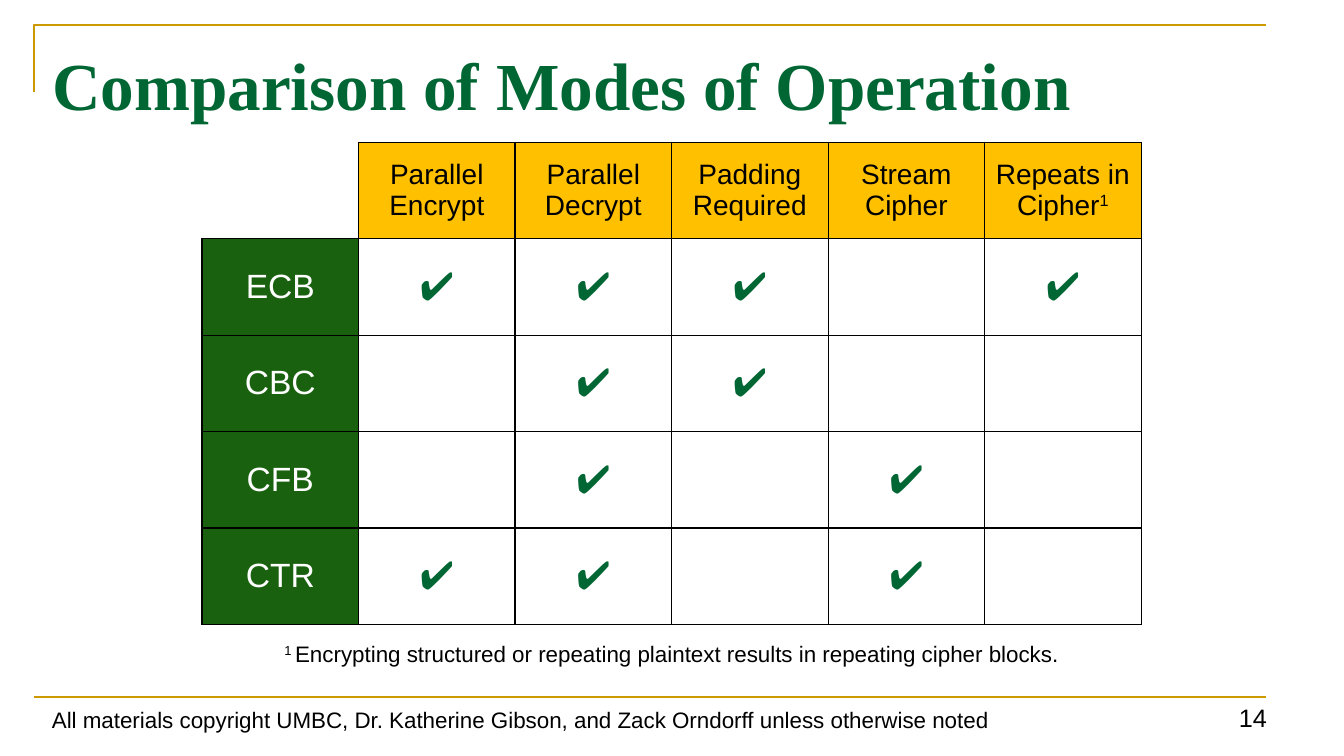
from lxml.etree import SubElement
from pptx import Presentation
from pptx.dml.color import RGBColor
from pptx.enum.shapes import MSO_CONNECTOR
from pptx.enum.text import MSO_ANCHOR, MSO_AUTO_SIZE, PP_ALIGN
from pptx.oxml.ns import qn
from pptx.util import Pt

COLORS = {
    "gold": "CC9900",
    "green": "006633",
    "header": "FFC000",
    "label": "1A610F",
    "black": "000000",
    "white": "FFFFFF",
}

FORMATS = {
    "title": {"name": "Times New Roman", "size": Pt(48), "bold": True, "color": "green"},
    "header": {"name": "Arial", "size": Pt(20), "color": "black"},
    "label": {"name": "Arial", "size": Pt(24), "color": "white"},
    "check": {"name": "Arial", "size": Pt(28), "color": "green"},
    "note": {"name": "Arial", "size": Pt(16), "color": "black"},
    "number": {"name": "Arial", "size": Pt(18), "color": "black"},
}

PROPERTIES = ["Parallel Encrypt", "Parallel Decrypt", "Padding Required",
              "Stream Cipher", "Repeats in Cipher"]
MODES = {
    "ECB": (1, 1, 1, 0, 1),
    "CBC": (0, 1, 1, 0, 0),
    "CFB": (0, 1, 0, 1, 0),
    "CTR": (1, 1, 0, 1, 0),
}
COLUMN_WIDTH, ROW_HEIGHT = 111.8, 68.9


def rgb(color):
    return RGBColor.from_string(COLORS[color])


def add_span(para, text, style, superscript=False):
    span = para.add_run()
    span.text = text
    for key, value in FORMATS[style].items():
        if key == "color":
            span.font.color.rgb = rgb(value)
        else:
            setattr(span.font, key, value)
    if superscript:
        span._r.get_or_add_rPr().set("baseline", "32000")


def set_margins(target, margin):
    for side in ("left", "top", "right", "bottom"):
        setattr(target, f"margin_{side}", Pt(margin))


def add_title(slide, text):
    title = slide.shapes.title
    place = {"left": 30, "top": 21.6, "width": 881, "height": 80}
    for key, value in place.items():
        setattr(title, key, Pt(value))
    frame = title.text_frame
    layout = {"vertical_anchor": MSO_ANCHOR.TOP, "auto_size": MSO_AUTO_SIZE.NONE,
              "margin_top": Pt(9)}
    for key, value in layout.items():
        setattr(frame, key, value)
    frame.paragraphs[0].alignment = PP_ALIGN.LEFT
    add_span(frame.paragraphs[0], text, "title")


def add_text(slide, place, alignment, anchor, wrap=True):
    """Add an empty text box and return its first paragraph."""
    box = slide.shapes.add_textbox(*map(Pt, place))
    box.text_frame.word_wrap = wrap
    box.text_frame.vertical_anchor = anchor
    box.text_frame.paragraphs[0].alignment = alignment
    return box.text_frame.paragraphs[0]


def style_line(shape):
    shape.line.color.rgb = rgb("gold")
    shape.line.width = Pt(1.5)


def add_frame_lines(slide):
    """Draw the corner above the title and the rule above the footer."""
    builder = slide.shapes.build_freeform(Pt(24), Pt(66))
    builder.add_line_segments([(Pt(24), Pt(18)), (Pt(904), Pt(18))], close=False)
    corner = builder.convert_to_shape()
    corner.shadow.inherit = False
    corner.fill.background()
    style_line(corner)

    rule = slide.shapes.add_connector(
        MSO_CONNECTOR.STRAIGHT, Pt(24), Pt(498), Pt(904), Pt(498))
    SubElement(rule._element.spPr, qn("a:effectLst"))
    style_line(rule)


def set_borders(cell, sides):
    properties = cell._tc.get_or_add_tcPr()
    for side in sides:
        line = SubElement(properties, qn(f"a:ln{side}"), w=str(Pt(1)))
        fill = SubElement(line, qn("a:solidFill"))
        SubElement(fill, qn("a:srgbClr"), val=COLORS["black"])


def fill_cell(cell, text, style, fill=None, sides="LRTB"):
    set_borders(cell, sides)
    if fill:
        cell.fill.solid()
        cell.fill.fore_color.rgb = rgb(fill)
    else:
        cell.fill.background()
    cell.vertical_anchor = MSO_ANCHOR.MIDDLE
    set_margins(cell, 5)
    para = cell.text_frame.paragraphs[0]
    para.alignment = PP_ALIGN.CENTER
    if text:
        add_span(para, text, style)


def add_mode_table(slide):
    columns, rows = len(PROPERTIES) + 1, len(MODES) + 1
    table = slide.shapes.add_table(
        rows, columns, Pt(144.3), Pt(101.6),
        Pt(COLUMN_WIDTH * columns), Pt(ROW_HEIGHT * rows)).table
    table.first_row = table.horz_banding = False
    for column in table.columns:
        column.width = Pt(COLUMN_WIDTH)
    for row in table.rows:
        row.height = Pt(ROW_HEIGHT)

    fill_cell(table.cell(0, 0), "", "header", sides="RB")
    for column, name in enumerate(PROPERTIES, 1):
        fill_cell(table.cell(0, column), name, "header", "header")
    last_header = table.cell(0, columns - 1)
    add_span(last_header.text_frame.paragraphs[0], "1", "header", superscript=True)

    for row, (mode, checks) in enumerate(MODES.items(), 1):
        fill_cell(table.cell(row, 0), mode, "label", "label")
        for column, checked in enumerate(checks, 1):
            fill_cell(table.cell(row, column), "✔" if checked else "", "check")


def main():
    deck = Presentation()
    deck.slide_width, deck.slide_height = Pt(960), Pt(540)
    slide = deck.slides.add_slide(deck.slide_layouts[5])

    add_frame_lines(slide)
    footer = add_text(slide, (30, 492, 744, 35), PP_ALIGN.LEFT, MSO_ANCHOR.BOTTOM)
    add_span(footer, "All materials copyright UMBC, Dr. Katherine Gibson, "
                     "and Zack Orndorff unless otherwise noted", "note")
    number = add_text(slide, (808, 492, 104, 35), PP_ALIGN.RIGHT, MSO_ANCHOR.BOTTOM)
    add_span(number, "14", "number")

    add_title(slide, "Comparison of Modes of Operation")
    footnote = add_text(slide, (195, 453, 569.5, 27.4), PP_ALIGN.CENTER,
                        MSO_ANCHOR.MIDDLE, wrap=False)
    add_span(footnote, "1 ", "note", superscript=True)
    add_span(footnote, "Encrypting structured or repeating plaintext results "
                       "in repeating cipher blocks.", "note")
    add_mode_table(slide)
    deck.save("out.pptx")


if __name__ == "__main__":
    main()
